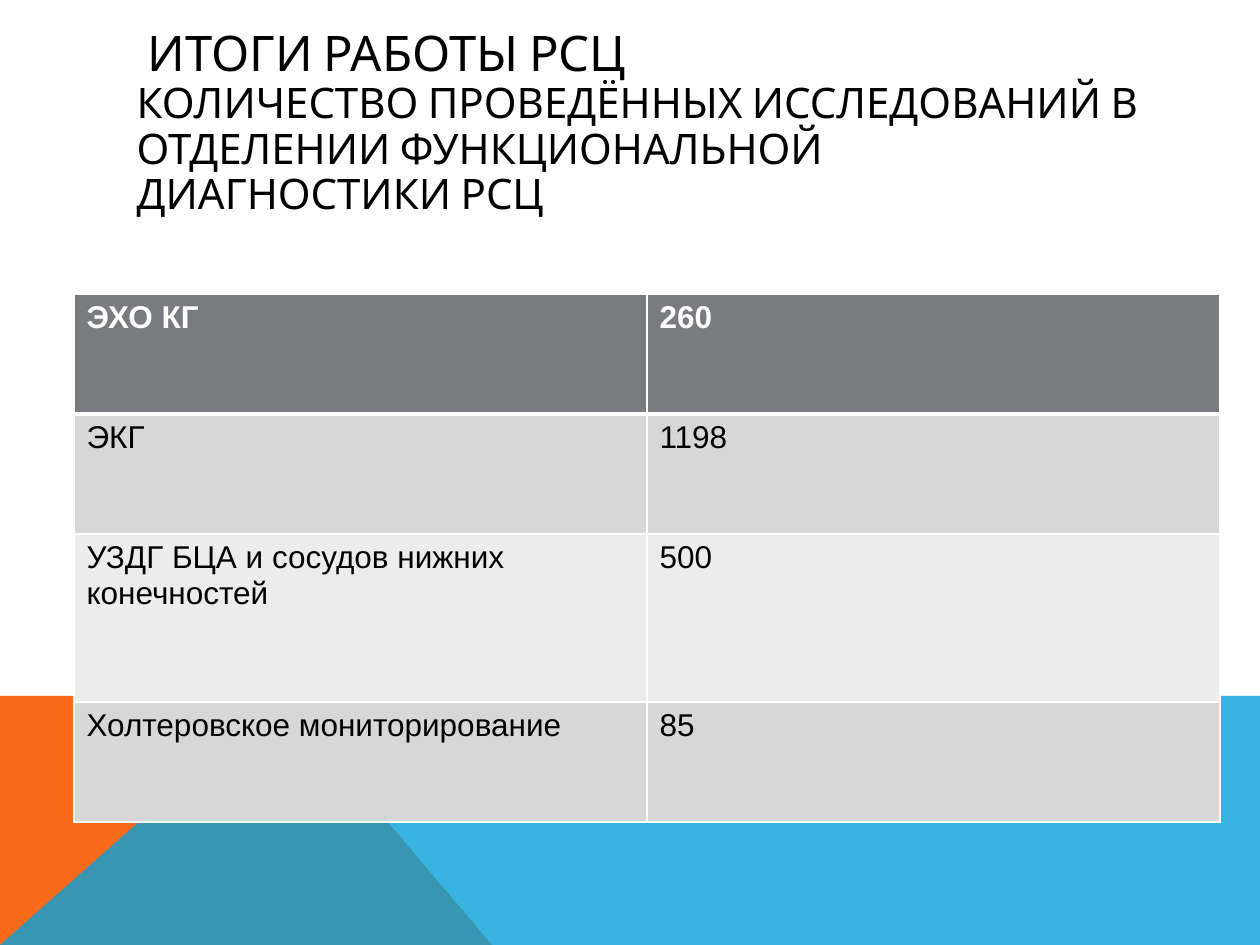
from dataclasses import dataclass

from lxml.etree import SubElement
from pptx import Presentation
from pptx.dml.color import RGBColor
from pptx.enum.text import MSO_ANCHOR, MSO_AUTO_SIZE, PP_ALIGN
from pptx.oxml import parse_xml
from pptx.oxml.ns import nsdecls, qn
from pptx.util import Emu, Pt

EMU_PER_PX = 914400 / 126


@dataclass(frozen=True)
class Theme:
    title_font: str = "Cabin"
    table_font: str = "Arial"
    heading_size: int = 28
    subheading_size: int = 24
    table_size: int = 18
    ink: str = "000000"
    white: str = "FFFFFF"
    header: str = "797B7E"
    band_dark: str = "D7D7D8"
    band_light: str = "ECECEC"
    orange: str = "F96A1B"
    blue: str = "08A1D9"


@dataclass(frozen=True)
class Ribbon:
    points: tuple[tuple[int, int], ...]
    color: str
    opacity: int = 100


@dataclass(frozen=True)
class Study:
    name: str
    count: str
    height: int = 120


THEME = Theme()
RIBBONS = (
    Ribbon(((0, 945), (0, 696), (281, 696), (492, 945)), THEME.orange),
    Ribbon(((0, 945), (281, 696), (1260, 696), (1260, 945)), THEME.blue, 80),
)
STUDIES = (
    Study("ЭХО КГ", "260"),
    Study("ЭКГ", "1198"),
    Study("УЗДГ БЦА и сосудов нижних конечностей", "500", 168),
    Study("Холтеровское мониторирование", "85"),
)
COLUMN_WIDTH = 573


def px(length: int) -> Emu:
    return Emu(round(length * EMU_PER_PX))


def rgb(color: str) -> RGBColor:
    return RGBColor.from_string(color)


def draw_ribbon(page, ribbon: Ribbon) -> None:
    builder = page.shapes.build_freeform(*ribbon.points[0], scale=EMU_PER_PX)
    builder.add_line_segments(ribbon.points[1:], close=True)
    shape = builder.convert_to_shape()
    shape.shadow.inherit = False
    shape.line.fill.background()
    shape.fill.solid()
    shape.fill.fore_color.rgb = rgb(ribbon.color)
    if ribbon.opacity < 100:
        color = shape.element.spPr.find(".//" + qn("a:srgbClr"))
        SubElement(color, qn("a:alpha"), val=str(ribbon.opacity * 1000))


def write_title(page) -> None:
    title = page.shapes.title
    title.left, title.top, title.width, title.height = map(px, (124, 86, 1035, 76))
    frame = title.text_frame
    frame.auto_size = MSO_AUTO_SIZE.NONE
    frame.word_wrap = True
    frame.vertical_anchor = MSO_ANCHOR.MIDDLE
    para = frame.paragraphs[0]
    para.alignment = PP_ALIGN.LEFT
    para.line_spacing = 0.9
    para.font.name = THEME.title_font
    para.font.color.rgb = rgb(THEME.ink)
    heading = para.add_run()
    heading.text = " ИТОГИ РАБОТЫ РСЦ"
    heading.font.size = Pt(THEME.heading_size)
    para.add_line_break()
    subheading = para.add_run()
    subheading.text = (
        "КОЛИЧЕСТВО ПРОВЕДЁННЫХ ИССЛЕДОВАНИЙ В "
        "ОТДЕЛЕНИИ ФУНКЦИОНАЛЬНОЙ ДИАГНОСТИКИ РСЦ"
    )
    subheading.font.size = Pt(THEME.subheading_size)


def set_borders(cell, top: int, bottom: int) -> None:
    properties = cell._tc.get_or_add_tcPr()
    sides = {"lnL": 1, "lnR": 1, "lnT": top, "lnB": bottom}
    for position, (side, points) in enumerate(sides.items()):
        border = parse_xml(
            f'<a:{side} {nsdecls("a")} w="{Pt(points)}"><a:solidFill>'
            f'<a:srgbClr val="{THEME.white}"/></a:solidFill></a:{side}>'
        )
        properties.insert(position, border)


def write_cell(cell, text: str, row: int) -> None:
    is_header = row == 0
    band = THEME.band_dark if row % 2 else THEME.band_light
    cell.fill.solid()
    cell.fill.fore_color.rgb = rgb(THEME.header if is_header else band)
    set_borders(cell, top=3 if row == 1 else 1, bottom=3 if is_header else 1)
    cell.text = text
    font = cell.text_frame.paragraphs[0].font
    font.name = THEME.table_font
    font.size = Pt(THEME.table_size)
    font.bold = is_header
    font.color.rgb = rgb(THEME.white if is_header else THEME.ink)


def draw_table(page, studies: tuple[Study, ...]) -> None:
    height = sum(study.height for study in studies)
    table = page.shapes.add_table(
        len(studies), 2, px(74), px(294), px(2 * COLUMN_WIDTH), px(height)
    ).table
    for column in table.columns:
        column.width = px(COLUMN_WIDTH)
    for row, study in enumerate(studies):
        table.rows[row].height = px(study.height)
        for column, text in enumerate((study.name, study.count)):
            write_cell(table.cell(row, column), text, row)


def main() -> None:
    deck = Presentation()
    deck.slide_width, deck.slide_height = px(1260), px(945)
    page = deck.slides.add_slide(deck.slide_layouts[5])
    for ribbon in RIBBONS:
        draw_ribbon(page, ribbon)
    write_title(page)
    draw_table(page, STUDIES)
    deck.save("out.pptx")


if __name__ == "__main__":
    main()
